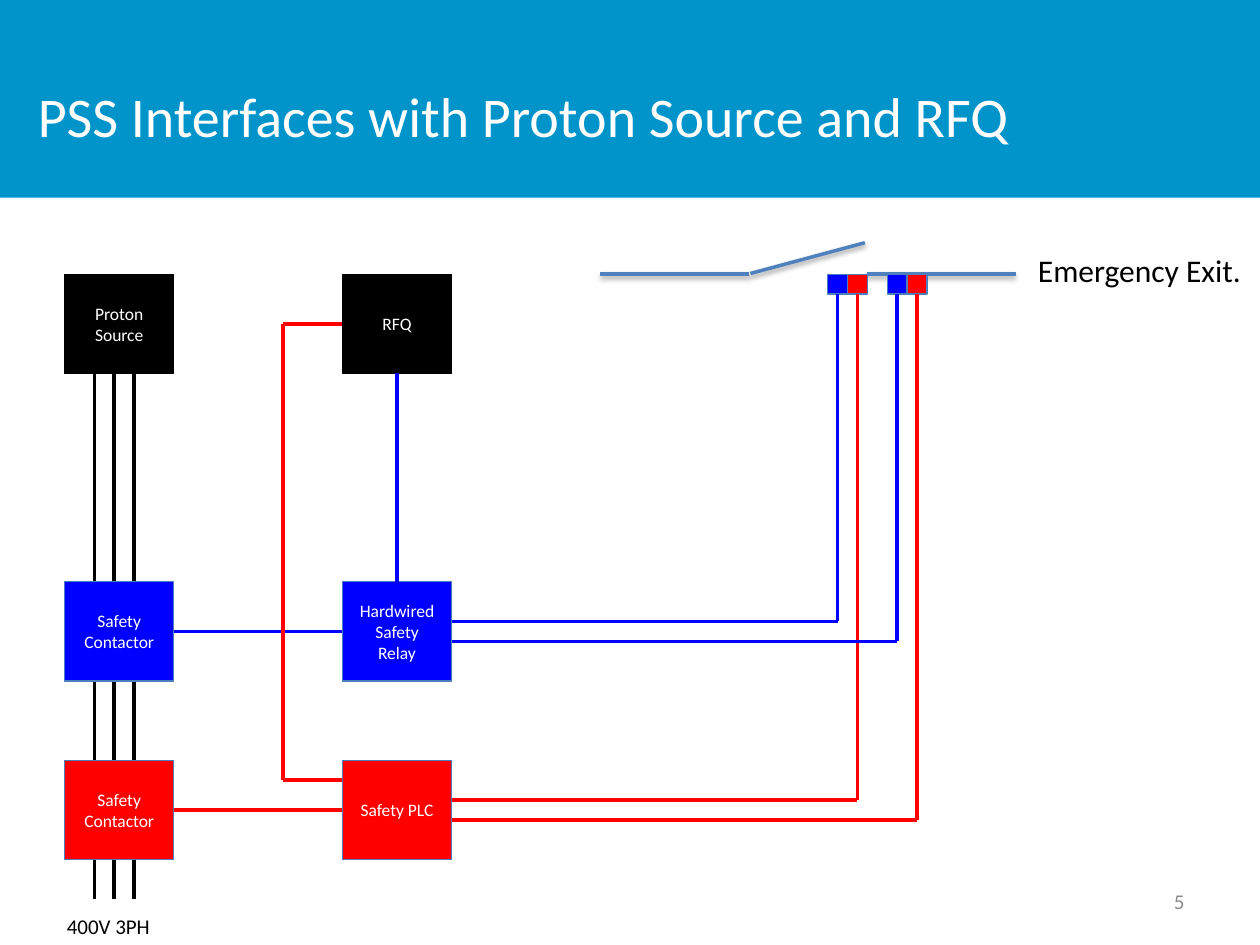
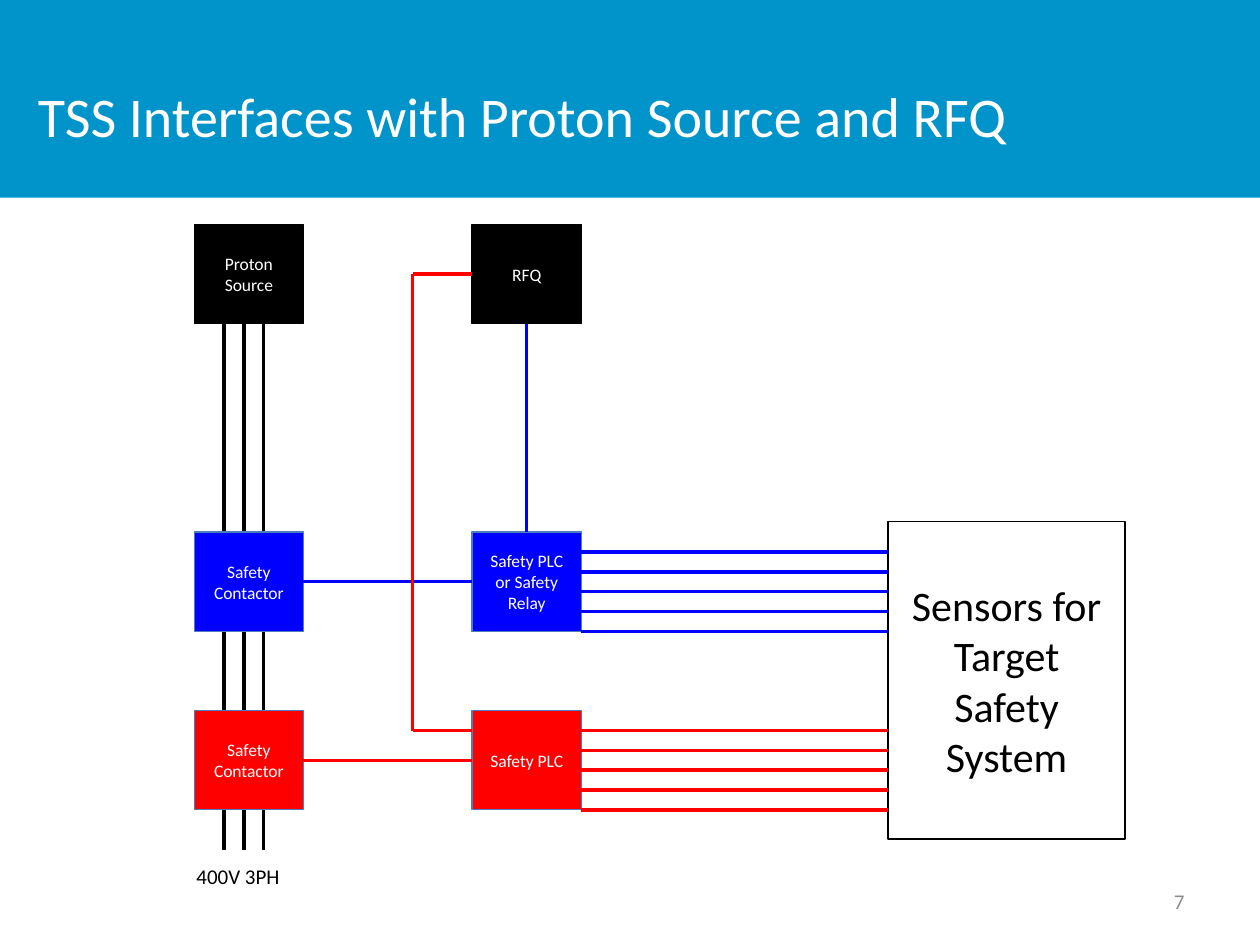
from dataclasses import dataclass
from typing import Any

from lxml.etree import SubElement
from pptx import Presentation
from pptx.dml.color import RGBColor
from pptx.enum.shapes import MSO_CONNECTOR, MSO_SHAPE
from pptx.enum.text import MSO_ANCHOR, MSO_AUTO_SIZE, PP_ALIGN
from pptx.oxml.ns import qn
from pptx.util import Pt

FONT = "Calibri"
BLACK, WHITE, GREY = "000000", "FFFFFF", "8C8C8C"
BLUE, RED = "0000FF", "FF0000"
BAND, OUTLINE, DOOR = "0094CA", "4B7EBC", "4F81BD"

STEP = 11.34  # grid unit of the diagrams
BOX_W, BOX_H = 62.4, 5 * STEP
COLUMN_PITCH = 14 * STEP
RELAY_ROW, PLC_ROW = 15.5 * STEP, 24.5 * STEP
TOP, LEFT, BOTTOM, RIGHT = range(4)


@dataclass
class Side:
    """The middle of one side of a box, where a wire can be joined."""
    box: Any
    site: int

    def point(self):
        box = self.box
        x = box.left + box.width * {LEFT: 0, RIGHT: 1}.get(self.site, 0.5)
        y = box.top + box.height * {TOP: 0, BOTTOM: 1}.get(self.site, 0.5)
        return x / Pt(1), y / Pt(1)


def rgb(color):
    return RGBColor.from_string(color)


def place(shape, left, top, width, height):
    shape.left, shape.top = Pt(left), Pt(top)
    shape.width, shape.height = Pt(width), Pt(height)


def write(shape, text, size=10, color=WHITE, align=PP_ALIGN.LEFT,
          anchor=MSO_ANCHOR.MIDDLE, wrap=True):
    frame = shape.text_frame
    frame.text = text
    frame.auto_size = MSO_AUTO_SIZE.NONE
    frame.word_wrap = wrap
    frame.vertical_anchor = anchor
    for paragraph in frame.paragraphs:
        paragraph.alignment = align
        paragraph.font.name = FONT
        paragraph.font.size = Pt(size)
        paragraph.font.color.rgb = rgb(color)


def add_label(slide, text, left, top, width, height, **text_format):
    label = slide.shapes.add_textbox(Pt(left), Pt(top), Pt(width), Pt(height))
    write(label, text, **text_format)


def add_box(slide, left, top, width=BOX_W, height=BOX_H, fill=None,
            outline=OUTLINE, text="", **text_format):
    box = slide.shapes.add_shape(MSO_SHAPE.RECTANGLE, Pt(left), Pt(top),
                                 Pt(width), Pt(height))
    box.shadow.inherit = False
    if fill:
        box.fill.solid()
        box.fill.fore_color.rgb = rgb(fill)
    else:
        box.fill.background()
    if outline:
        box.line.color.rgb = rgb(outline)
        box.line.width = Pt(0.75)
    else:
        box.line.fill.background()
    if text:
        write(box, text, **{"align": PP_ALIGN.CENTER, **text_format})
    return box


def add_wire(slide, start, end, color, shadow=False):
    """Draw a straight line; each end is an (x, y) point or a Side to join."""
    points = [e.point() if isinstance(e, Side) else e for e in (start, end)]
    (x1, y1), (x2, y2) = points
    wire = slide.shapes.add_connector(MSO_CONNECTOR.STRAIGHT,
                                      Pt(x1), Pt(y1), Pt(x2), Pt(y2))
    wire.line.color.rgb = rgb(color)
    wire.line.width = Pt(2)
    if isinstance(start, Side):
        wire.begin_connect(start.box, start.site)
    if isinstance(end, Side):
        wire.end_connect(end.box, end.site)
    effects = SubElement(wire.element.spPr, qn("a:effectLst"))
    if shadow:
        outer = SubElement(effects, qn("a:outerShdw"), blurRad=str(Pt(3.1)),
                           dist=str(Pt(1.6)), dir="5400000", rotWithShape="0")
        shade = SubElement(outer, qn("a:srgbClr"), val=BLACK)
        SubElement(shade, qn("a:alpha"), val="38000")


def add_titled_slide(prs, layout, title, number):
    slide = prs.slides.add_slide(layout)
    place(slide.shapes.title, 14.4, 20.9, 618, 90)
    write(slide.shapes.title, title, size=32)
    add_label(slide, number, 516, 500.5, 168, 28.8, size=12, color=GREY,
              align=PP_ALIGN.RIGHT)
    return slide


def add_band(slide, layout):
    """Put the title band on the layout, behind everything else."""
    band = add_box(slide, 0, 0, 720, 113, fill=BAND, outline=None)
    layout.shapes.element.insert(2, band.element)


def draw_interlock(slide, left, top, relay_text):
    """Draw source, RFQ, contactors and controllers; return relay and PLC."""
    right = left + COLUMN_PITCH
    relay_y, plc_y = top + RELAY_ROW, top + PLC_ROW
    source = add_box(slide, left, top, fill=BLACK, outline=BLACK,
                     text="Proton Source")
    rfq = add_box(slide, right, top, fill=BLACK, outline=BLACK, text="RFQ")
    relay = add_box(slide, right, relay_y, fill=BLUE, text=relay_text)
    plc = add_box(slide, right, plc_y, fill=RED, text="Safety PLC")

    phase_spans = [(top + BOX_H, relay_y), (relay_y + BOX_H, plc_y),
                   (plc_y + BOX_H, plc_y + 7 * STEP)]
    for phase in range(3):
        x = left + (1.5 + phase) * STEP
        for y1, y2 in phase_spans:
            add_wire(slide, (x, y1), (x, y2), BLACK)
    add_label(slide, "400V 3PH", left - 5.8, plc_y + BOX_H + 27.2, 62.6, 21.6,
              size=12, color=BLACK, anchor=MSO_ANCHOR.TOP, wrap=False)

    for controller, y, color in ((relay, relay_y, BLUE), (plc, plc_y, RED)):
        contactor = add_box(slide, left, y, fill=color,
                            text="Safety Contactor")
        add_wire(slide, Side(controller, LEFT), Side(contactor, RIGHT), color)

    add_wire(slide, Side(rfq, BOTTOM), Side(relay, TOP), BLUE)
    bypass_x, rfq_y, plc_input_y = right - 3 * STEP, top + BOX_H / 2, plc_y + STEP
    add_wire(slide, (bypass_x, rfq_y), (bypass_x, plc_input_y), RED)
    add_wire(slide, Side(rfq, LEFT), (bypass_x, rfq_y), RED)
    add_wire(slide, (right, plc_input_y), (bypass_x, plc_input_y), RED)
    return relay, plc


def draw_emergency_exit(slide, door_y, relay, plc):
    for start, end in (((343, door_y), (428, door_y)),
                       ((495.4, door_y), (580.4, door_y)),
                       ((428.8, door_y - 0.4), (494.2, door_y - 18))):
        add_wire(slide, start, end, DOOR, shadow=True)
    add_label(slide, "Emergency Exit.", 586, 139.7, 132, 28.8, size=18,
              color=BLACK, anchor=MSO_ANCHOR.TOP, wrap=False)

    for pair in range(2):
        for slot, (controller, color) in enumerate(((relay, BLUE), (plc, RED))):
            x = 473 + (3 * pair + slot) * STEP
            switch = add_box(slide, x, door_y, STEP, STEP, fill=color)
            corner = (x + STEP / 2, controller.top.pt + (2 + pair) * STEP)
            add_wire(slide, Side(switch, BOTTOM), corner, color)
            add_wire(slide, corner, (Side(controller, RIGHT).point()[0], corner[1]),
                     color)


def draw_target_sensors(slide, relay, plc):
    sensors = add_box(slide, 507.5, 298, 135.5, 181.5, outline=BLACK,
                      text="Sensors for\nTarget\nSafety\nSystem", size=24,
                      color=BLACK, anchor=MSO_ANCHOR.TOP)
    sensors.text_frame.margin_top = Pt(33)
    for controller, color in ((relay, BLUE), (plc, RED)):
        controller_x = Side(controller, RIGHT).point()[0]
        for channel in range(1, 6):
            y = controller.top.pt + channel * STEP
            add_wire(slide, (sensors.left.pt, y), (controller_x, y), color)


def main():
    prs = Presentation()
    prs.slide_width, prs.slide_height = Pt(720), Pt(540)
    layout = prs.slide_layouts[5]

    pss = add_titled_slide(prs, layout,
                           "PSS Interfaces with Proton Source and RFQ", "5")
    add_band(pss, layout)
    relay, plc = draw_interlock(pss, 36.9, 156.7, "Hardwired Safety Relay")
    draw_emergency_exit(pss, 156.7, relay, plc)

    tss = add_titled_slide(prs, layout,
                           "TSS Interfaces with Proton Source and RFQ", "7")
    relay, plc = draw_interlock(tss, 111, 128.3, "Safety PLC or Safety Relay")
    draw_target_sensors(tss, relay, plc)

    prs.save("out.pptx")


if __name__ == "__main__":
    main()
